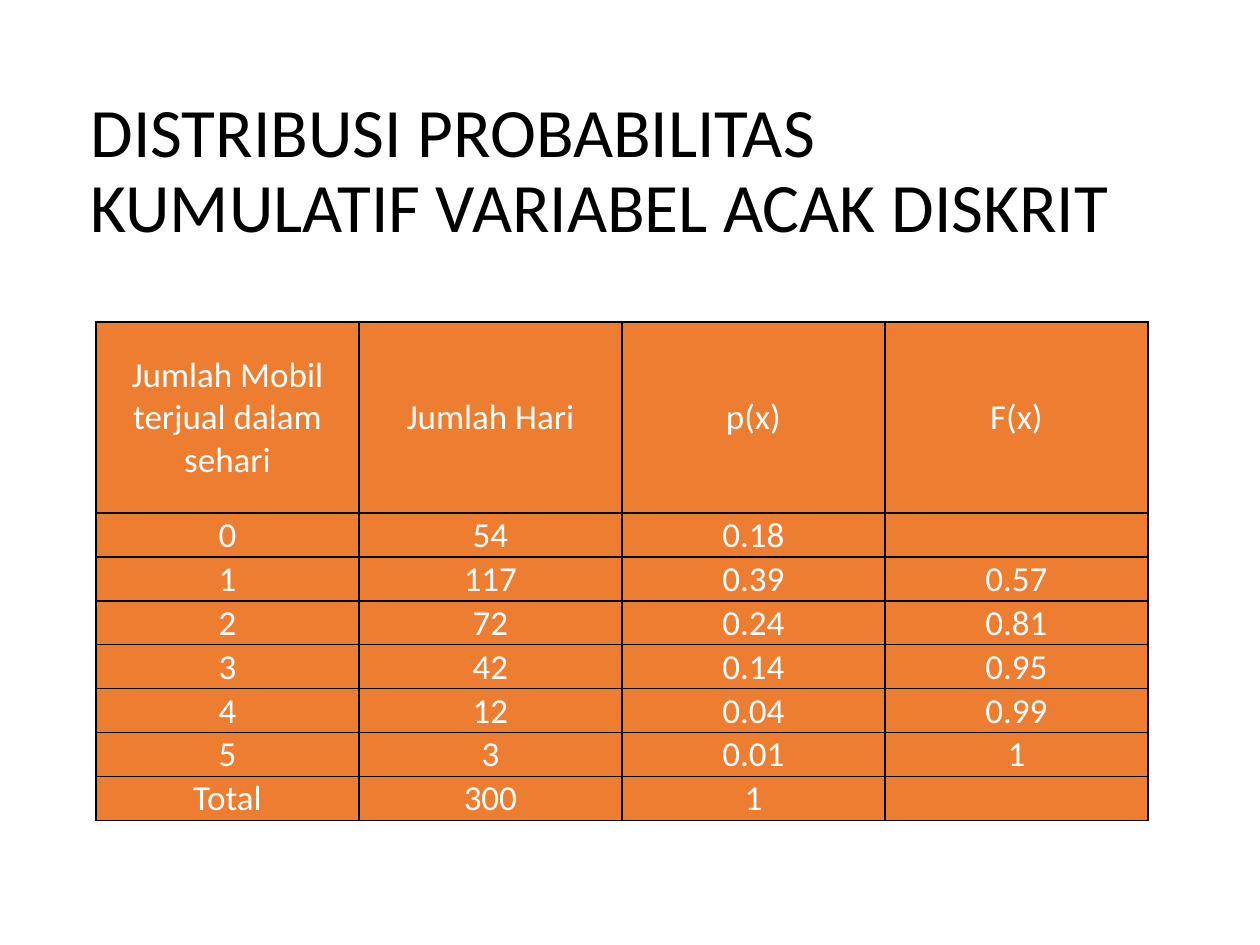
"""Build the slide on the cumulative distribution of a discrete random variable."""
from typing import Any, NamedTuple

from lxml.etree import SubElement
from pptx import Presentation
from pptx.dml.color import RGBColor
from pptx.enum.text import MSO_ANCHOR, MSO_AUTO_SIZE, PP_ALIGN
from pptx.oxml.ns import qn
from pptx.util import Emu, Pt

BLACK = RGBColor(0, 0, 0)
WHITE = RGBColor(255, 255, 255)
ORANGE = RGBColor(0xED, 0x7D, 0x31)
FONT = "Calibri"
SCALE = 914400 / 126


class Box(NamedTuple):
    left: int
    top: int
    width: int
    height: int


class Row(NamedTuple):
    sold: str
    days: str
    prob: str
    total: str


HEAD = 191
LINE = 43
TITLE = Box(78, 81, 1086, 183)
ROWS = [
    Row("Jumlah Mobil terjual dalam sehari", "Jumlah Hari", "p(x)", "F(x)"),
    Row("0", "54", "0.18", ""),
    Row("1", "117", "0.39", "0.57"),
    Row("2", "72", "0.24", "0.81"),
    Row("3", "42", "0.14", "0.95"),
    Row("4", "12", "0.04", "0.99"),
    Row("5", "3", "0.01", "1"),
    Row("Total", "300", "1", ""),
]
GRID = Box(96, 322, 1052, HEAD + LINE * (len(ROWS) - 1))


def px(size: int) -> Emu:
    return Emu(round(size * SCALE))


def write(frame: Any, text: str, *, size: float, color: RGBColor,
          align: PP_ALIGN, space: float = 1.0) -> None:
    para = frame.paragraphs[0]
    para.alignment = align
    para.line_spacing = space
    run = para.add_run()
    run.text = text
    font = run.font
    font.name, font.size, font.bold = FONT, Pt(size), False
    font.color.rgb = color


def border(cell: Any) -> None:
    props = cell._tc.get_or_add_tcPr()
    for side in ("a:lnL", "a:lnR", "a:lnT", "a:lnB"):
        line = SubElement(props, qn(side), w=str(Pt(1)))
        fill = SubElement(line, qn("a:solidFill"))
        SubElement(fill, qn("a:srgbClr"), val=str(BLACK))


def draw_cell(cell: Any, text: str) -> None:
    border(cell)
    cell.fill.solid()
    cell.fill.fore_color.rgb = ORANGE
    cell.vertical_anchor = MSO_ANCHOR.MIDDLE
    cell.margin_left = cell.margin_right = cell.margin_top = px(1)
    cell.margin_bottom = px(0)
    if text:
        write(cell.text_frame, text, size=20, color=WHITE, align=PP_ALIGN.CENTER)


def draw_table(slide: Any, box: Box, rows: list[Row]) -> None:
    cols = len(Row._fields)
    table = slide.shapes.add_table(len(rows), cols, *map(px, box)).table
    table.first_row = table.horz_banding = False
    for col in table.columns:
        col.width = px(box.width // cols)
    for num, row in enumerate(rows):
        table.rows[num].height = px(LINE if num else HEAD)
        for cell, text in zip(table.rows[num].cells, row):
            draw_cell(cell, text)


def draw_title(slide: Any, box: Box, text: str) -> None:
    title = slide.shapes.title
    title.left, title.top, title.width, title.height = map(px, box)
    frame = title.text_frame
    frame.word_wrap = True
    frame.auto_size = MSO_AUTO_SIZE.NONE
    frame.vertical_anchor = MSO_ANCHOR.MIDDLE
    write(frame, text, size=39.6, color=BLACK, align=PP_ALIGN.LEFT, space=0.9)


def main() -> None:
    deck = Presentation()
    deck.slide_width, deck.slide_height = px(1260), px(945)
    slide = deck.slides.add_slide(deck.slide_layouts[5])
    draw_title(slide, TITLE, "DISTRIBUSI PROBABILITAS KUMULATIF VARIABEL ACAK DISKRIT")
    draw_table(slide, GRID, ROWS)
    deck.save("out.pptx")


if __name__ == "__main__":
    main()
